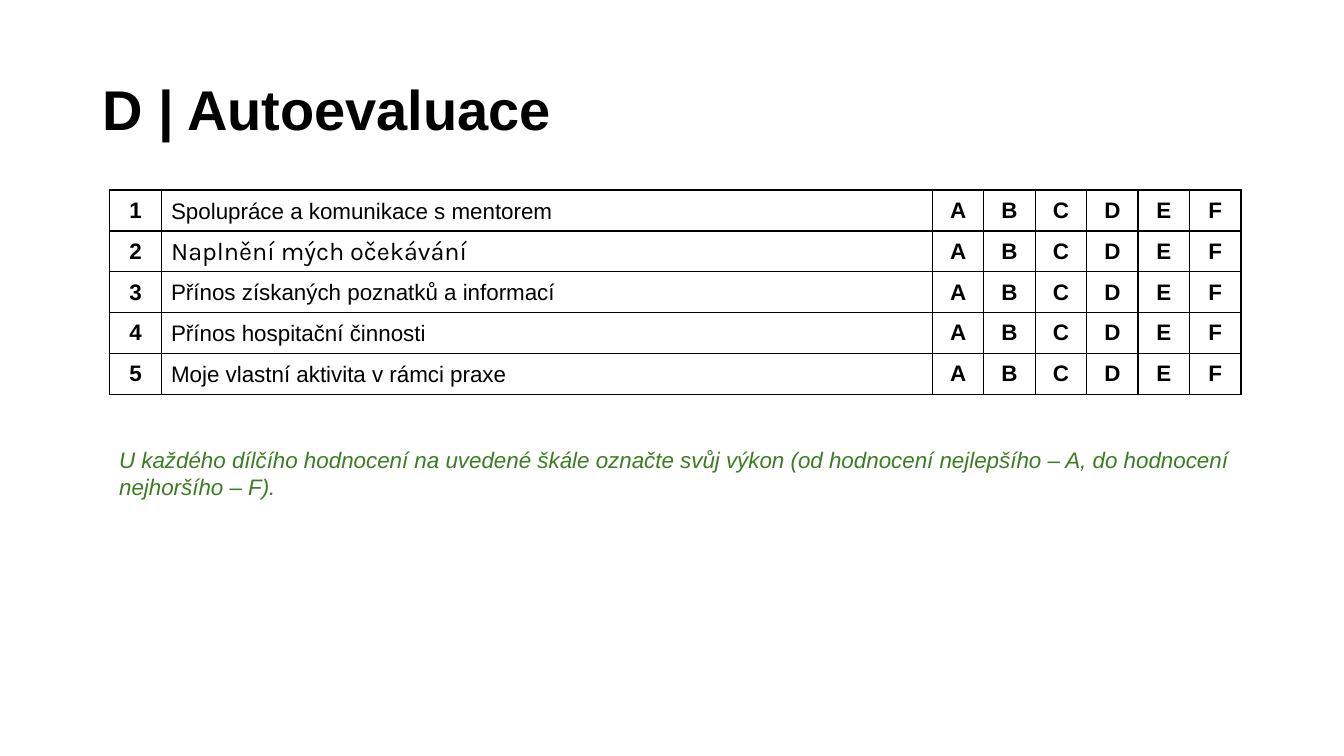
import dataclasses

import lxml.etree
import pptx
import pptx.dml.color
import pptx.enum.text
import pptx.oxml.ns
import pptx.util

EMU_PER_PX = 9525
BLACK, GREEN = "000000", "3B7D23"
GRADES = "ABCDEF"
ROW_HEIGHT = 39
COL_WIDTHS = [50, 734] + [49] * len(GRADES)
MIDDLE = pptx.enum.text.MSO_ANCHOR.MIDDLE


@dataclasses.dataclass
class Style:
    size: int
    font: str = "Arial"
    color: str = BLACK
    bold: bool = False
    italic: bool = False


@dataclasses.dataclass
class Criterion:
    text: str
    style: Style


GRADE_STYLE = Style(16, bold=True)
LABEL_STYLE = Style(16)
CRITERIA = [
    Criterion("Spolupráce a komunikace s mentorem", LABEL_STYLE),
    Criterion("Naplnění mých očekávání", Style(18, font="Karla")),
    Criterion("Přínos získaných poznatků a informací", LABEL_STYLE),
    Criterion("Přínos hospitační činnosti", LABEL_STYLE),
    Criterion("Moje vlastní aktivita v rámci praxe", LABEL_STYLE),
]


def px(n: int) -> int:
    return pptx.util.Emu(n * EMU_PER_PX)


def rgb(value: str) -> pptx.dml.color.RGBColor:
    return pptx.dml.color.RGBColor.from_string(value)


def write(p, text: str, style: Style) -> None:
    p.text = text
    p.font.size = pptx.util.Pt(style.size)
    p.font.name = style.font
    p.font.bold = style.bold
    p.font.italic = style.italic
    p.font.color.rgb = rgb(style.color)


def add_text(slide, x: int, y: int, w: int, h: int, text: str, style: Style):
    tf = slide.shapes.add_textbox(px(x), px(y), px(w), px(h)).text_frame
    tf.word_wrap = True
    write(tf.paragraphs[0], text, style)
    return tf


def add_borders(cell) -> None:
    tc_pr = cell._tc.get_or_add_tcPr()
    for i, side in enumerate(("lnL", "lnR", "lnT", "lnB")):
        ln = lxml.etree.Element(pptx.oxml.ns.qn(f"a:{side}"), w=str(pptx.util.Pt(1)))
        fill = lxml.etree.SubElement(ln, pptx.oxml.ns.qn("a:solidFill"))
        lxml.etree.SubElement(fill, pptx.oxml.ns.qn("a:srgbClr"), val=BLACK)
        tc_pr.insert(i, ln)


def fill_cell(cell, text: str, style: Style, is_label: bool) -> None:
    cell.fill.background()
    cell.vertical_anchor = MIDDLE
    cell.margin_left = cell.margin_right = cell.margin_top = cell.margin_bottom = 0
    p = cell.text_frame.paragraphs[0]
    write(p, text, style)
    if is_label:
        p.line_spacing = 1.07
        p.space_after = pptx.util.Pt(8)
        p._p.get_or_add_pPr().set("marL", str(px(9)))
    else:
        p.alignment = pptx.enum.text.PP_ALIGN.CENTER
        p.space_before = pptx.util.Pt(1.3)
    add_borders(cell)


def add_criteria_table(slide, x: int, y: int) -> None:
    table = slide.shapes.add_table(
        len(CRITERIA), len(COL_WIDTHS), px(x), px(y),
        px(sum(COL_WIDTHS)), px(ROW_HEIGHT * len(CRITERIA))).table
    table.first_row = table.horz_banding = False
    for column, width in zip(table.columns, COL_WIDTHS):
        column.width = px(width)
    for i, criterion in enumerate(CRITERIA):
        table.rows[i].height = px(ROW_HEIGHT)
        for j, text in enumerate([str(i + 1), criterion.text, *GRADES]):
            is_label = j == 1
            style = criterion.style if is_label else GRADE_STYLE
            fill_cell(table.cell(i, j), text, style, is_label)


def main() -> None:
    prs = pptx.Presentation()
    prs.slide_width, prs.slide_height = px(1280), px(720)
    slide = prs.slides.add_slide(prs.slide_layouts[6])

    # Title
    tf = add_text(slide, 88, 38, 1104, 139, "D | Autoevaluace", Style(40, bold=True))
    tf.vertical_anchor = MIDDLE
    tf.paragraphs[0].line_spacing = 0.9

    # Self-assessment grid
    add_criteria_table(slide, 104, 181)

    # Instruction
    tf = add_text(
        slide, 104, 420, 1104, 153,
        "U každého dílčího hodnocení na uvedené škále označte svůj výkon "
        "(od hodnocení nejlepšího – A, do hodnocení nejhoršího – F).",
        Style(16, color=GREEN, italic=True))
    tf.paragraphs[0].space_before = pptx.util.Pt(10)

    prs.save("out.pptx")


if __name__ == "__main__":
    main()
